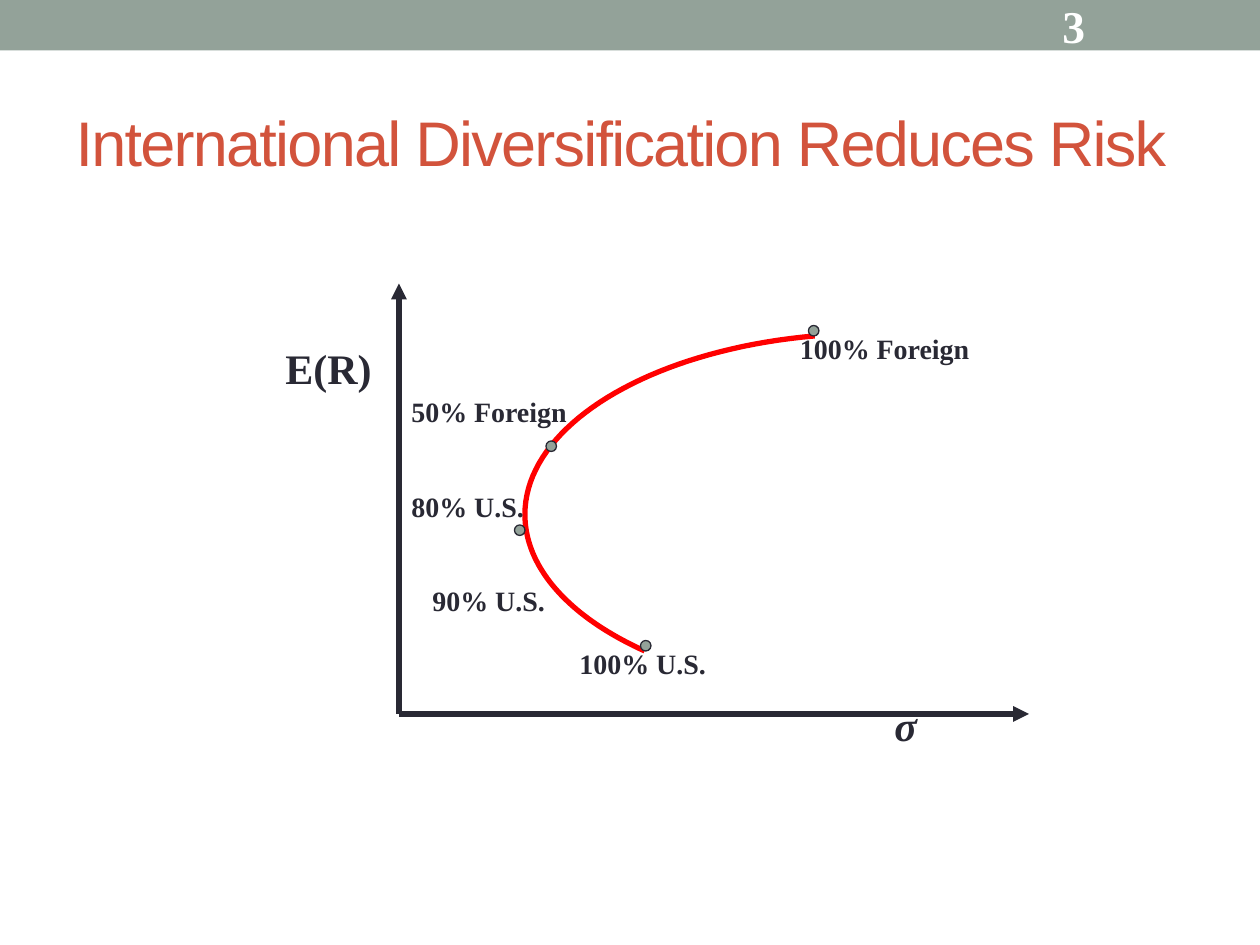
from lxml.etree import SubElement
from pptx import Presentation
from pptx.dml.color import RGBColor
from pptx.enum.shapes import MSO_CONNECTOR, MSO_SHAPE
from pptx.enum.text import MSO_ANCHOR, PP_ALIGN
from pptx.oxml.ns import qn
from pptx.util import Emu, Pt

SCALE = 7620
SERIF = "Times New Roman"
SAGE, INK, RED, RUST, WHITE = "93A299", "292934", "FF0000", "D2533C", "FFFFFF"

CURVE = [
    [(516, 50), (357, 64), (240, 136), (240, 220)],
    [(240, 220), (240, 270), (281, 317), (354, 350)],
]
DOTS = [(350, 340), (510, 40), (230, 230), (260, 150)]
POINT_LABELS = [
    ("100% Foreign", 490, 40, 220),
    ("80% U.S.", 120, 190, 200),
    ("100% U.S.", 280, 340, 160),
    ("90% U.S.", 140, 280, 190),
    ("50% Foreign", 120, 100, 200),
]


def px(n):
    return Emu(round(n * SCALE))


def color(value):
    return RGBColor.from_string(value)


def set_text(sp, text, size, ink, font=SERIF, bold=True, italic=False):
    tf = sp.text_frame
    tf.word_wrap = True
    tf.text = text
    p = tf.paragraphs[0]
    p.alignment = PP_ALIGN.LEFT
    f = p.runs[0].font
    f.name, f.size, f.bold, f.italic = font, Pt(size), bold, italic
    f.color.rgb = color(ink)
    return p


def add_text(s, text, x, y, w, h, size, ink=INK, italic=False):
    sp = s.shapes.add_textbox(px(x), px(y), px(w), px(h))
    set_text(sp, text, size, ink, italic=italic)
    return sp


def add_filled(s, kind, x, y, w, h, line=None):
    sp = s.shapes.add_shape(kind, px(x), px(y), px(w), px(h))
    sp.shadow.inherit = False
    sp.fill.solid()
    sp.fill.fore_color.rgb = color(SAGE)
    if line:
        sp.line.color.rgb = color(line)
        sp.line.width = Pt(0.75)
    else:
        sp.line.fill.background()


def add_arrow(s, x1, y1, x2, y2):
    cx = s.shapes.add_connector(MSO_CONNECTOR.STRAIGHT, px(x1), px(y1), px(x2), px(y2))
    cx.line.color.rgb = color(INK)
    cx.line.width = Pt(3)
    SubElement(cx.line._get_or_add_ln(), qn("a:tailEnd"), type="triangle")
    SubElement(cx._element.spPr, qn("a:effectLst"))


def bezier(a, b, c, d, steps=40):
    for i in range(steps + 1):
        t = i / steps
        u = 1 - t
        yield tuple(
            u**3 * k + 3 * u * u * t * m + 3 * u * t * t * n + t**3 * o
            for k, m, n, o in zip(a, b, c, d)
        )


def add_curve(s, x, y):
    points = [(px(x + a), px(y + b)) for part in CURVE for a, b in bezier(*part)]
    fb = s.shapes.build_freeform(*points[0])
    fb.add_line_segments(points[1:], close=False)
    sp = fb.convert_to_shape()
    sp.shadow.inherit = False
    sp.fill.background()
    sp.line.color.rgb = color(RED)
    sp.line.width = Pt(3)


def add_header(s, x, y, w, h):
    add_filled(s, MSO_SHAPE.RECTANGLE, x, y, w, h)
    number = add_text(s, "3", x + 1000, y + 2, 140, h - 4, 26, WHITE)
    number.text_frame.vertical_anchor = MSO_ANCHOR.MIDDLE


def add_title(s, x, y, w, h):
    sp = s.shapes.title
    sp.left, sp.top, sp.width, sp.height = px(x), px(y), px(w), px(h)
    p = set_text(sp, "International Diversification Reduces Risk", 36, RUST, "Arial", False)
    sp.text_frame.vertical_anchor = MSO_ANCHOR.MIDDLE
    p.runs[0].font._element.set("spc", "-100")


def add_frontier(s, x, y, w, h):
    left, bottom = x + 120, y + h
    add_arrow(s, left, bottom, x + w, bottom)
    add_curve(s, x, y)
    add_arrow(s, left, bottom, left, y)
    for dx, dy in DOTS:
        add_filled(s, MSO_SHAPE.OVAL, x + dx, y + dy, 10, 10, INK)
    for text, dx, dy, width in POINT_LABELS:
        add_text(s, text, x + dx, y + dy, width, 44, 16)
    axis_labels = [("E(R)", 0, 50, 130, False), ("σ", 580, 390, 50, True)]
    for text, dx, dy, width, italic in axis_labels:
        sp = add_text(s, text, x + dx, y + dy, width, 60, 24, italic=italic)
        sp.text_frame.paragraphs[0].space_before = Pt(3)


def main():
    prs = Presentation()
    prs.slide_width, prs.slide_height = px(1200), px(900)
    s = prs.slides.add_slide(prs.slide_layouts[5])
    s.background.fill.solid()
    s.background.fill.fore_color.rgb = color(WHITE)
    add_header(s, 0, 0, 1200, 48)
    add_title(s, 60, 70, 1080, 130)
    add_frontier(s, 260, 270, 720, 410)
    prs.save("out.pptx")


if __name__ == "__main__":
    main()
